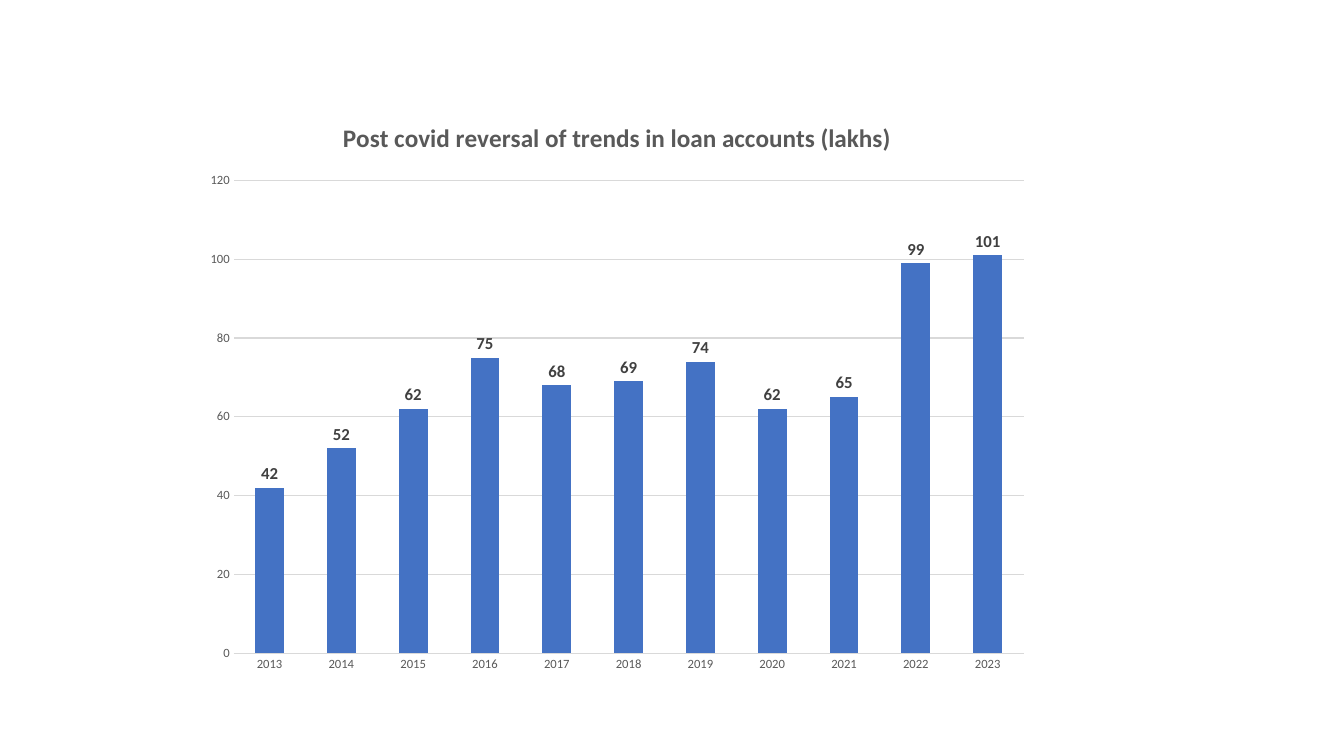
from pptx import Presentation
from pptx.chart.data import CategoryChartData
from pptx.dml.color import RGBColor
from pptx.enum.chart import XL_CHART_TYPE as Kind, XL_LABEL_POSITION as Spot, XL_TICK_MARK as Tick
from pptx.util import Inches, Pt

COLORS = {"bar": "4472C4", "grid": "D9D9D9", "text": "595959", "label": "404040"}


def style(font, size, color, bold=False):
    font.name = "Calibri"
    font.size = Pt(size)
    font.bold = bold
    font.color.rgb = RGBColor.from_string(COLORS[color])


deck = Presentation()
deck.slide_width = Inches(13.33)
deck.slide_height = Inches(7.5)
slide = deck.slides.add_slide(deck.slide_layouts[6])

# Loan accounts by year
data = CategoryChartData()
data.categories = [str(year) for year in range(2013, 2024)]
data.add_series("Series 1", [42, 52, 62, 75, 68, 69, 74, 62, 65, 99, 101])
chart = slide.shapes.add_chart(
    Kind.COLUMN_CLUSTERED, Inches(1.92), Inches(0.98), Inches(8.4), Inches(5.8), data
).chart
chart.has_legend = False
style(chart.font, 10, "text")

# Title
chart.has_title = True
chart.chart_title.include_in_layout = False
run = chart.chart_title.text_frame.paragraphs[0].add_run()
run.text = "Post covid reversal of trends in loan accounts (lakhs)"
style(run.font, 18, "text", True)

# Axes
years, counts = chart.category_axis, chart.value_axis
for axis in (years, counts):
    axis.major_tick_mark = Tick.NONE
    axis.minor_tick_mark = Tick.NONE
    style(axis.tick_labels.font, 9, "text")
years.format.line.color.rgb = RGBColor.from_string(COLORS["grid"])
years.format.line.width = Pt(0.75)
counts.format.line.fill.background()
counts.minimum_scale = 0
counts.maximum_scale = 120
counts.major_unit = 20
counts.has_major_gridlines = True
grid = counts.major_gridlines.format.line
grid.color.rgb = RGBColor.from_string(COLORS["grid"])
grid.width = Pt(0.75)

# Bars and their values
plot = chart.plots[0]
plot.gap_width = 150
plot.vary_by_categories = False
bars = plot.series[0]
bars.invert_if_negative = False
bars.format.fill.solid()
bars.format.fill.fore_color.rgb = RGBColor.from_string(COLORS["bar"])
labels = bars.data_labels
labels.show_value = True
labels.position = Spot.OUTSIDE_END
style(labels.font, 12, "label", True)

deck.save("out.pptx")
